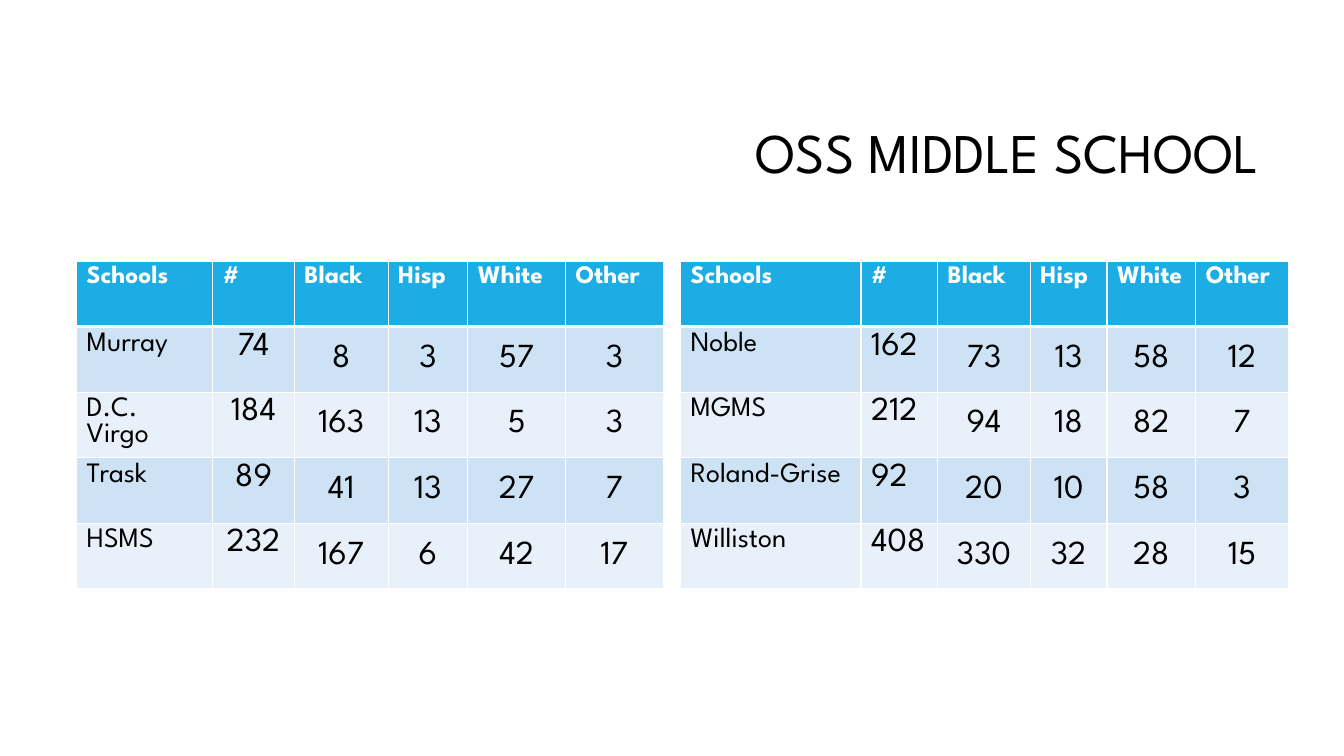
from dataclasses import dataclass

from lxml import etree
from pptx import Presentation
from pptx.dml.color import RGBColor
from pptx.enum.text import MSO_ANCHOR, PP_ALIGN
from pptx.oxml.ns import qn
from pptx.slide import Slide
from pptx.table import _Cell
from pptx.util import Inches, Pt

LEFT, CENTER, RIGHT = PP_ALIGN.LEFT, PP_ALIGN.CENTER, PP_ALIGN.RIGHT
TOP, MIDDLE = MSO_ANCHOR.TOP, MSO_ANCHOR.MIDDLE
TITLE_ONLY_LAYOUT = 5


@dataclass(frozen=True)
class Theme:
    font: str = "League Spartan"
    text: str = "000000"
    white: str = "FFFFFF"
    header_fill: str = "1CADE4"
    band_fills: tuple[str, str] = ("CDE3F5", "E8F1FA")
    title_size: int = 40
    header_size: int = 18
    school_size: int = 20
    number_size: int = 24
    thin_border: int = 1
    thick_border: int = 3


@dataclass(frozen=True)
class SchoolTable:
    left: float
    column_widths: tuple[float, ...]
    total_alignment: PP_ALIGN
    schools: tuple[tuple[str, int, int, int, int, int], ...]


@dataclass(frozen=True)
class CellStyle:
    fill: str
    color: str
    size: int
    bold: bool = False
    alignment: PP_ALIGN = LEFT
    anchor: MSO_ANCHOR = TOP


THEME = Theme()
TABLE_TOP = 2.59
ROW_HEIGHT = 0.65
HEADINGS = ("Schools", "#", "Black", "Hisp", "White", "Other")

TABLES = (
    SchoolTable(0.76, (1.35, 0.81, 0.93, 0.79, 0.97, 0.97), CENTER, (
        ("Murray", 74, 8, 3, 57, 3),
        ("D.C. Virgo", 184, 163, 13, 5, 3),
        ("Trask", 89, 41, 13, 27, 7),
        ("HSMS", 232, 167, 6, 42, 17),
    )),
    SchoolTable(6.75, (1.79, 0.76, 0.92, 0.76, 0.88, 0.92), LEFT, (
        ("Noble", 162, 73, 13, 58, 12),
        ("MGMS", 212, 94, 18, 82, 7),
        ("Roland-Grise", 92, 20, 10, 58, 3),
        ("Williston", 408, 330, 32, 28, 15),
    )),
)


def add_run(paragraph, text: str, size: int, color: str, bold: bool = False) -> None:
    run = paragraph.add_run()
    run.text = text
    run.font.name = THEME.font
    run.font.size = Pt(size)
    run.font.bold = bold
    run.font.color.rgb = RGBColor.from_string(color)


def set_borders(cell: _Cell, row: int) -> None:
    """Draw white cell borders, thicker between the header and the body."""
    properties = cell._tc.get_or_add_tcPr()
    thick_side = {0: "lnB", 1: "lnT"}.get(row)
    for side in ("lnL", "lnR", "lnT", "lnB"):
        width = THEME.thick_border if side == thick_side else THEME.thin_border
        line = etree.SubElement(properties, qn(f"a:{side}"), w=str(Pt(width)))
        fill = etree.SubElement(line, qn("a:solidFill"))
        etree.SubElement(fill, qn("a:srgbClr"), val=THEME.white)


def cell_style(row: int, column: int, total_alignment: PP_ALIGN) -> CellStyle:
    if row == 0:
        return CellStyle(THEME.header_fill, THEME.white, THEME.header_size, bold=True)
    fill = THEME.band_fills[(row - 1) % 2]
    if column == 0:
        return CellStyle(fill, THEME.text, THEME.school_size)
    if column == 1:
        return CellStyle(fill, THEME.text, THEME.number_size, alignment=total_alignment)
    return CellStyle(fill, THEME.text, THEME.number_size, alignment=CENTER, anchor=MIDDLE)


def fill_cell(cell: _Cell, text: str, style: CellStyle, row: int) -> None:
    set_borders(cell, row)
    cell.fill.solid()
    cell.fill.fore_color.rgb = RGBColor.from_string(style.fill)
    cell.vertical_anchor = style.anchor
    paragraph = cell.text_frame.paragraphs[0]
    paragraph.alignment = style.alignment
    add_run(paragraph, text, style.size, style.color, style.bold)


def add_title(slide: Slide, text: str) -> None:
    title = slide.shapes.title
    title.left, title.top = Inches(3.17), Inches(0.84)
    title.width, title.height = Inches(9.42), Inches(1.41)
    title.text_frame.vertical_anchor = MIDDLE
    paragraph = title.text_frame.paragraphs[0]
    paragraph.alignment = RIGHT
    paragraph.line_spacing = 0.9
    add_run(paragraph, text, THEME.title_size, THEME.text)


def add_school_table(slide: Slide, school_table: SchoolTable) -> None:
    rows = (HEADINGS, *school_table.schools)
    table = slide.shapes.add_table(
        len(rows), len(HEADINGS), Inches(school_table.left), Inches(TABLE_TOP),
        Inches(sum(school_table.column_widths)), Inches(ROW_HEIGHT * len(rows)),
    ).table
    for column, width in zip(table.columns, school_table.column_widths):
        column.width = Inches(width)
    for row, values in enumerate(rows):
        table.rows[row].height = Inches(ROW_HEIGHT)
        for column, value in enumerate(values):
            style = cell_style(row, column, school_table.total_alignment)
            fill_cell(table.cell(row, column), str(value), style, row)


def main() -> None:
    presentation = Presentation()
    presentation.slide_width = Inches(13.33)
    presentation.slide_height = Inches(7.5)
    slide = presentation.slides.add_slide(presentation.slide_layouts[TITLE_ONLY_LAYOUT])

    # Title
    add_title(slide, "OSS MIDDLE SCHOOL")

    # School tables side by side
    for school_table in TABLES:
        add_school_table(slide, school_table)

    presentation.save("out.pptx")


if __name__ == "__main__":
    main()
